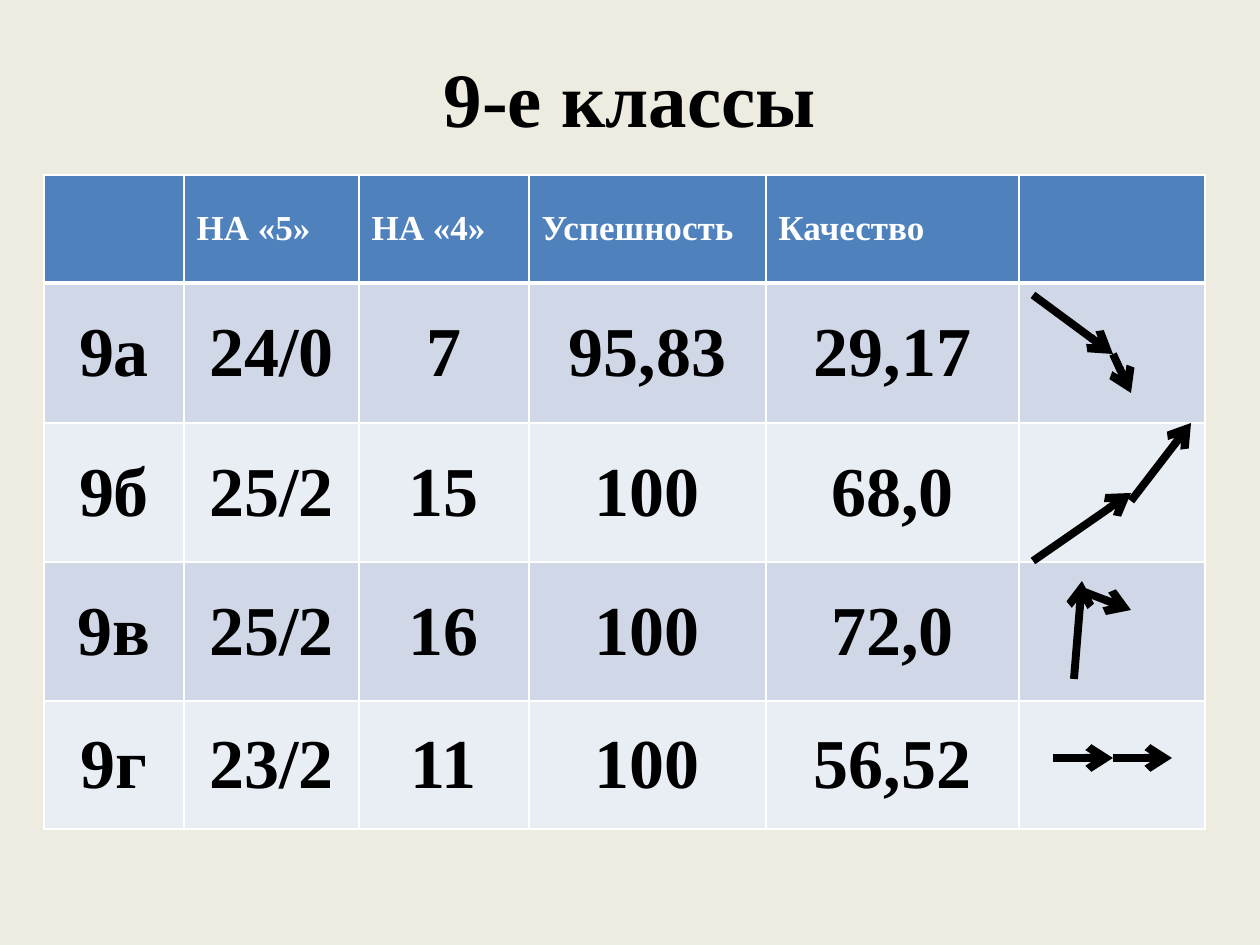
import pptx
import pptx.util
import pptx.dml.color
import pptx.enum.shapes
import pptx.enum.text
from lxml import etree
from dataclasses import dataclass

# Content
TITLE = "9-е классы"
ROWS = [
    ("", "НА «5»", "НА «4»", "Успешность", "Качество", ""),
    ("9а", "24/0", "7", "95,83", "29,17", ""),
    ("9б", "25/2", "15", "100", "68,0", ""),
    ("9в", "25/2", "16", "100", "72,0", ""),
    ("9г", "23/2", "11", "100", "56,52", ""),
]

# Layout, in px (126 px to the inch)
SLIDE = (1260, 945)
TITLE_BOX = (63, 38, 1134, 117)
TABLE_AT = (44, 175)
COL_WIDTHS = (140, 175, 170, 237, 253, 186)
ROW_HEIGHTS = (108, 140, 139, 139, 128)
TREND_ARROWS = [  # x1, y1, x2, y2
    (1033, 561, 1131, 493),
    (1074, 679, 1082, 581),
    (1033, 295, 1113, 354),
    (1113, 354, 1131, 393),
    (1131, 501, 1191, 423),
    (1082, 591, 1131, 610),
    (1053, 758, 1113, 758),
    (1113, 758, 1172, 758),
]


@dataclass(frozen=True)
class Theme:
    font: str = "Times New Roman"
    background: str = "EEECE1"
    header: str = "4F81BD"
    bands: tuple = ("D0D8E8", "E9EDF4")
    dark: str = "000000"
    light: str = "FFFFFF"
    title_pt: float = 44
    header_pt: float = 20
    body_pt: float = 40
    arrow_pt: float = 4.5
    border_pt: float = 1
    header_rule_pt: float = 3


T = Theme()
A = "http://schemas.openxmlformats.org/drawingml/2006/main"
PP_ALIGN = pptx.enum.text.PP_ALIGN
MIDDLE = pptx.enum.text.MSO_ANCHOR.MIDDLE


def px(n):
    return pptx.util.Emu(round(n * 914400 / 126))


def rgb(color):
    return pptx.dml.color.RGBColor.from_string(color)


def add_text(p, text, size, color, align):
    p.alignment = align
    r = p.add_run()
    r.text = text
    r.font.name, r.font.size, r.font.bold = T.font, pptx.util.Pt(size), True
    r.font.color.rgb = rgb(color)


def set_borders(cell, **widths):
    """Put border lines ahead of the fill, as the schema orders them."""
    tcPr = cell._tc.get_or_add_tcPr()
    for i, side in enumerate("LRTB"):
        ln = etree.Element(f"{{{A}}}ln{side}", w=str(pptx.util.Pt(widths.get(side, T.border_pt))))
        fill = etree.SubElement(ln, f"{{{A}}}solidFill")
        etree.SubElement(fill, f"{{{A}}}srgbClr", val=T.light)
        tcPr.insert(i, ln)


def add_title(s):
    sp = s.shapes.add_textbox(*map(px, TITLE_BOX))
    tf = sp.text_frame
    tf.word_wrap, tf.vertical_anchor = True, MIDDLE
    add_text(tf.paragraphs[0], TITLE, T.title_pt, T.dark, PP_ALIGN.CENTER)


def add_results(s):
    size = sum(COL_WIDTHS), sum(ROW_HEIGHTS)
    table = s.shapes.add_table(len(ROWS), len(COL_WIDTHS), *map(px, TABLE_AT + size)).table
    for col, width in zip(table.columns, COL_WIDTHS):
        col.width = px(width)
    for row, height in zip(table.rows, ROW_HEIGHTS):
        row.height = px(height)
    for i, values in enumerate(ROWS):
        if i == 0:
            fill, style = T.header, (T.header_pt, T.light, PP_ALIGN.LEFT)
        else:
            fill, style = T.bands[(i - 1) % 2], (T.body_pt, T.dark, PP_ALIGN.CENTER)
        # The thick rule is shared by the header and the row below it
        rule = {0: {"B": T.header_rule_pt}, 1: {"T": T.header_rule_pt}}.get(i, {})
        for j, value in enumerate(values):
            cell = table.cell(i, j)
            cell.vertical_anchor = MIDDLE
            cell.fill.solid()
            cell.fill.fore_color.rgb = rgb(fill)
            set_borders(cell, **rule)
            if value:
                add_text(cell.text_frame.paragraphs[0], value, *style)


def add_arrow(s, ends):
    sp = s.shapes.add_connector(pptx.enum.shapes.MSO_CONNECTOR.STRAIGHT, *map(px, ends))
    sp.line.color.rgb = rgb(T.dark)
    sp.line.width = pptx.util.Pt(T.arrow_pt)
    etree.SubElement(sp.line._get_or_add_ln(), f"{{{A}}}tailEnd", type="arrow")
    etree.SubElement(sp._element.spPr, f"{{{A}}}effectLst")


def main():
    prs = pptx.Presentation()
    prs.slide_width, prs.slide_height = map(px, SLIDE)
    s = prs.slides.add_slide(prs.slide_layouts[6])
    s.background.fill.solid()
    s.background.fill.fore_color.rgb = rgb(T.background)
    add_title(s)
    add_results(s)
    for ends in TREND_ARROWS:
        add_arrow(s, ends)
    prs.save("out.pptx")


if __name__ == "__main__":
    main()
